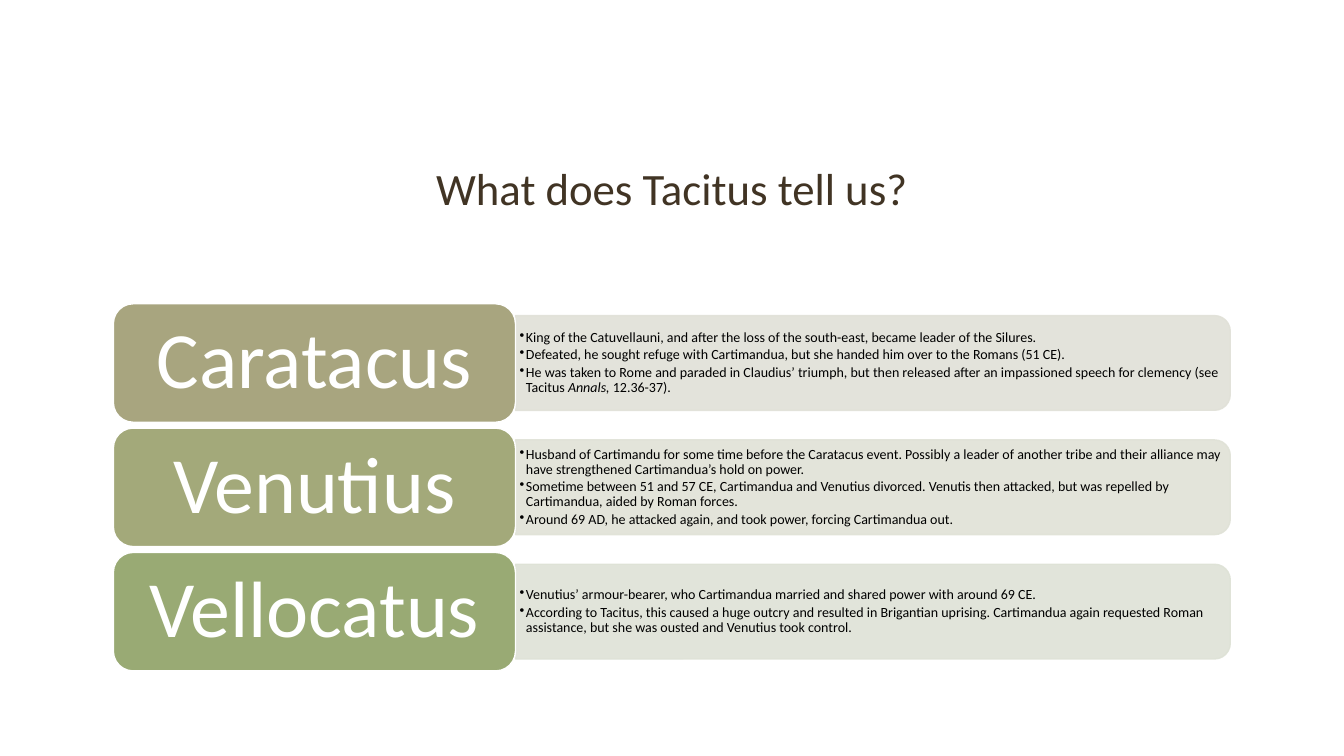
from dataclasses import dataclass

import lxml.etree
import pptx
import pptx.dml.color
import pptx.enum.shapes
import pptx.enum.text
import pptx.oxml.ns
import pptx.util

Pt = pptx.util.Pt
KIND = pptx.enum.shapes.MSO_SHAPE
ALIGN = pptx.enum.text.PP_ALIGN
ANCHOR = pptx.enum.text.MSO_ANCHOR
qn = pptx.oxml.ns.qn

LEFT, TOP, STEP = 81, 217, 88.8
NAME_WIDTH, NAME_HEIGHT = 287.2, 84.6
BAR_LEFT, BAR_WIDTH, BAR_HEIGHT = 368.2, 510.6, 67.7


@dataclass
class Person:
    name: str
    fill: str
    tint: str
    notes: list[list[str]]


PEOPLE = [
    Person("Caratacus", "A8A57F", "E1E1D8", [
        ["King of the Catuvellauni, and after the loss of the south-east, became leader of the Silures."],
        ["Defeated, he sought refuge with Cartimandua, but she handed him over to the Romans (51 CE)."],
        ["He was taken to Rome and paraded in Claudius’ triumph, but then released after an "
         "impassioned speech for clemency (see Tacitus ", "Annals, ", "12.36-37)."],
    ]),
    Person("Venutius", "A3A97A", "E0E2D7", [
        ["Husband of Cartimandu for some time before the Caratacus event. Possibly a leader of "
         "another tribe and their alliance may have strengthened Cartimandua’s hold on power."],
        ["Sometime between 51 and 57 CE, Cartimandua and Venutius divorced. Venutis then attacked, "
         "but was repelled by Cartimandua, aided by Roman forces."],
        ["Around 69 AD, he attacked again, and took power, forcing Cartimandua out."],
    ]),
    Person("Vellocatus", "99AA74", "DEE2D6", [
        ["Venutius’ armour-bearer, who Cartimandua married and shared power with around 69 CE."],
        ["According to Tacitus, this caused a huge outcry and resulted in Brigantian uprising. "
         "Cartimandua again requested Roman assistance, but she was ousted and Venutius took control."],
    ]),
]


def color(code: str) -> pptx.dml.color.RGBColor:
    return pptx.dml.color.RGBColor.from_string(code)


def style(line, size: float, code: str, space: float) -> None:
    line.line_spacing = space
    line.font.name = "Calibri"
    line.font.size = Pt(size)
    line.font.color.rgb = color(code)


def setup(frame, anchor, side: float, edge: float) -> None:
    frame.word_wrap = True
    frame.vertical_anchor = anchor
    frame.margin_left = frame.margin_right = Pt(side)
    frame.margin_top = frame.margin_bottom = Pt(edge)


def paint(shape, fill: str, line: str) -> None:
    shape.shadow.inherit = False
    shape.fill.solid()
    shape.fill.fore_color.rgb = color(fill)
    shape.line.color.rgb = color(line)
    shape.line.width = Pt(1)


def add_bar(slide, top: float, tint: str) -> None:
    left = BAR_LEFT + (BAR_WIDTH - BAR_HEIGHT) / 2
    rise = top + (BAR_HEIGHT - BAR_WIDTH) / 2
    bar = slide.shapes.add_shape(KIND.ROUND_2_SAME_RECTANGLE, Pt(left), Pt(rise),
                                 Pt(BAR_HEIGHT), Pt(BAR_WIDTH))
    bar.rotation = 90
    paint(bar, tint, tint)
    for part in bar._element.spPr.iter(qn("a:srgbClr")):
        lxml.etree.SubElement(part, qn("a:alpha"), val="90000")


def add_notes(slide, top: float, notes: list[list[str]]) -> None:
    box = slide.shapes.add_textbox(Pt(BAR_LEFT), Pt(top), Pt(BAR_WIDTH - 3), Pt(BAR_HEIGHT))
    frame = box.text_frame
    setup(frame, ANCHOR.MIDDLE, 3, 1.5)
    for index, note in enumerate(notes):
        line = frame.add_paragraph() if index else frame.paragraphs[0]
        line.space_after = Pt(1.5)
        style(line, 10, "000000", 0.9)
        props = line._p.get_or_add_pPr()
        props.set("marL", str(Pt(4.5)))
        props.set("indent", str(Pt(-4.5)))
        mark = lxml.etree.Element(qn("a:buChar"), char="•")
        props.find(qn("a:defRPr")).addprevious(mark)
        for place, text in enumerate(note):
            run = line.add_run()
            run.text = text
            if place == 1:
                run.font.italic = True


def add_name(slide, top: float, person: Person) -> None:
    box = slide.shapes.add_shape(KIND.ROUNDED_RECTANGLE, Pt(LEFT), Pt(top),
                                 Pt(NAME_WIDTH), Pt(NAME_HEIGHT))
    paint(box, person.fill, "FFFFFF")
    setup(box.text_frame, ANCHOR.MIDDLE, 3, 3)
    line = box.text_frame.paragraphs[0]
    line.text = person.name
    line.alignment = ALIGN.CENTER
    style(line, 57, "FFFFFF", 0.9)


def add_title(slide, text: str) -> None:
    box = slide.shapes.add_textbox(Pt(LEFT), Pt(75.6), Pt(798), Pt(81.4))
    setup(box.text_frame, ANCHOR.BOTTOM, 7.2, 3.6)
    line = box.text_frame.paragraphs[0]
    line.text = text
    line.alignment = ALIGN.CENTER
    style(line, 32, "413424", 1.1)


def main() -> None:
    deck = pptx.Presentation()
    deck.slide_width, deck.slide_height = Pt(960), Pt(540)
    slide = deck.slides.add_slide(deck.slide_layouts[6])
    add_title(slide, "What does Tacitus tell us?")
    for index, person in enumerate(PEOPLE):
        top = TOP + index * STEP
        inner = top + (NAME_HEIGHT - BAR_HEIGHT) / 2
        add_bar(slide, inner, person.tint)
        add_notes(slide, inner, person.notes)
        add_name(slide, top, person)
    deck.save("out.pptx")


if __name__ == "__main__":
    main()
